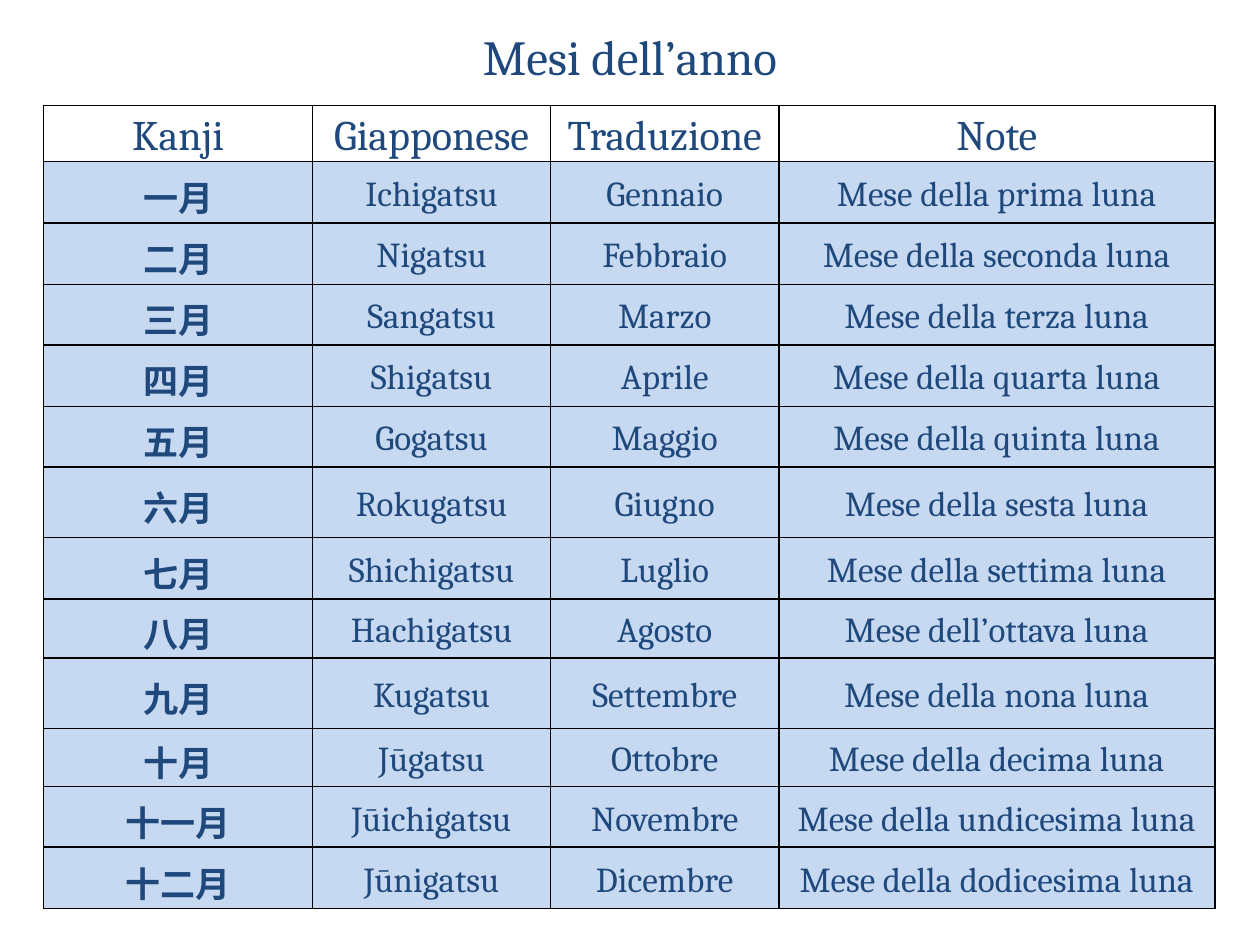
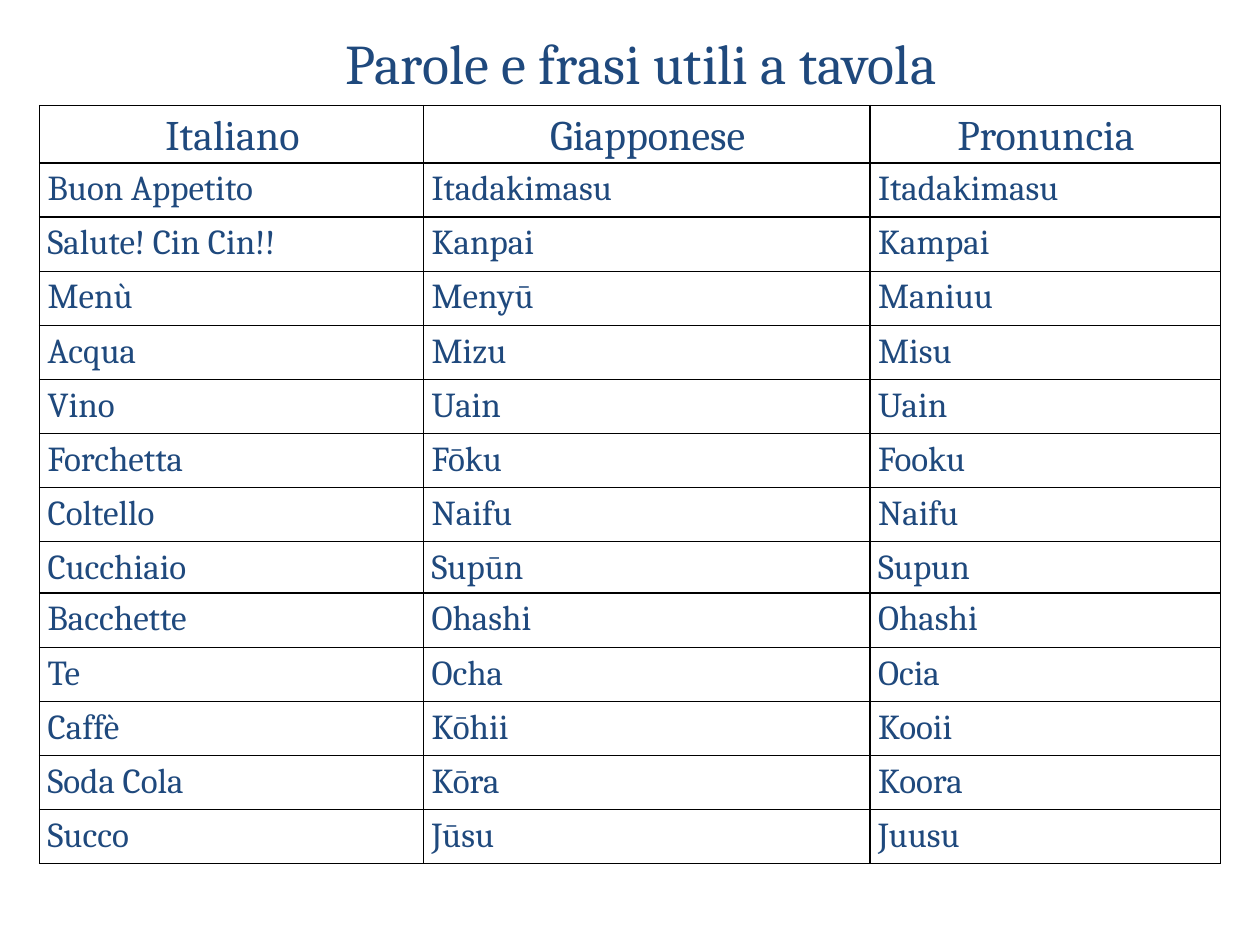
from lxml import etree
from pptx import Presentation
from pptx import util as u
from pptx.dml.color import RGBColor
from pptx.enum import text
from pptx.oxml import ns

FONT = "Cambria"
INK = "1F497D"
PALE_BLUE = "C6D9F1"
BORDER = "000000"
TABLE_TOP = 2.13
HEADER_HEIGHT = 1.1
HEADER_SIZE = 24
BODY_SIZE = 20

MONTHS = [
    ("Kanji", "Giapponese", "Traduzione", "Note"),
    ("一月", "Ichigatsu", "Gennaio", "Mese della prima luna"),
    ("二月", "Nigatsu", "Febbraio", "Mese della seconda luna"),
    ("三月", "Sangatsu", "Marzo", "Mese della terza luna"),
    ("四月", "Shigatsu", "Aprile", "Mese della quarta luna"),
    ("五月", "Gogatsu", "Maggio", "Mese della quinta luna"),
    ("六月", "Rokugatsu", "Giugno", "Mese della sesta luna"),
    ("七月", "Shichigatsu", "Luglio", "Mese della settima luna"),
    ("八月", "Hachigatsu", "Agosto", "Mese dell’ottava luna"),
    ("九月", "Kugatsu", "Settembre", "Mese della nona luna"),
    ("十月", "Jūgatsu", "Ottobre", "Mese della decima luna"),
    ("十一月", "Jūichigatsu", "Novembre", "Mese della undicesima luna"),
    ("十二月", "Jūnigatsu", "Dicembre", "Mese della dodicesima luna"),
]
MONTH_HEIGHTS = [1.24, 1.24, 1.22, 1.24, 1.22, 1.42, 1.24, 1.19, 1.42, 1.17, 1.22, 1.24]

PHRASES = [
    ("Italiano", "Giapponese", "Pronuncia"),
    ("Buon Appetito", "Itadakimasu", "Itadakimasu"),
    ("Salute! Cin Cin!!", "Kanpai", "Kampai"),
    ("Menù", "Menyū", "Maniuu"),
    ("Acqua", "Mizu", "Misu"),
    ("Vino", "Uain", "Uain"),
    ("Forchetta", "Fōku", "Fooku"),
    ("Coltello", "Naifu", "Naifu"),
    ("Cucchiaio", "Supūn", "Supun"),
    ("Bacchette", "Ohashi", "Ohashi"),
    ("Te", "Ocha", "Ocia"),
    ("Caffè", "Kōhii", "Kooii"),
    ("Soda Cola", "Kōra", "Koora"),
    ("Succo", "Jūsu", "Juusu"),
]
PHRASE_HEIGHTS = [1.09] * 7 + [1.04] + [1.09] * 5


def colour(value):
    return RGBColor.from_string(value)


def write(frame, words, size, bold=False, align=text.PP_ALIGN.CENTER, spacing=1.0):
    para = frame.paragraphs[0]
    para.alignment = align
    para.line_spacing = spacing
    span = para.add_run()
    span.text = words
    span.font.name = FONT
    span.font.size = u.Pt(size)
    span.font.bold = bold
    span.font.color.rgb = colour(INK)


def add_title(page, words, left, top, width, height, size):
    box = page.shapes.add_textbox(u.Cm(left), u.Cm(top), u.Cm(width), u.Cm(height))
    box.text_frame.word_wrap = True
    box.text_frame.vertical_anchor = text.MSO_ANCHOR.MIDDLE
    write(box.text_frame, words, size)


def add_borders(cell):
    """Draw 1 pt lines on all four sides; call before setting the cell's fill."""
    properties = cell._tc.get_or_add_tcPr()
    for side in ("a:lnL", "a:lnR", "a:lnT", "a:lnB"):
        line = etree.SubElement(properties, ns.qn(side), w=str(u.Pt(1)))
        fill = etree.SubElement(line, ns.qn("a:solidFill"))
        etree.SubElement(fill, ns.qn("a:srgbClr"), val=BORDER)


def set_fill(cell, value):
    if value:
        cell.fill.solid()
        cell.fill.fore_color.rgb = colour(value)
    else:
        cell.fill.background()


def set_margins(cell, left, top, right):
    cell.margin_left = u.Cm(left)
    cell.margin_top = u.Cm(top)
    cell.margin_right = u.Cm(right)
    cell.margin_bottom = 0


def add_word_table(page, rows, left, widths, heights, margins, spacing,
                   body_fill=None, body_align=text.PP_ALIGN.LEFT,
                   body_anchor=text.MSO_ANCHOR.TOP, bold_first=False):
    heights = [HEADER_HEIGHT] + heights
    table = page.shapes.add_table(
        len(rows), len(widths), u.Cm(left), u.Cm(TABLE_TOP),
        u.Cm(sum(widths)), u.Cm(sum(heights))).table
    table.first_row = table.horz_banding = False
    for column, width in zip(table.columns, widths):
        column.width = u.Cm(width)
    for r, (words_in_row, height) in enumerate(zip(rows, heights)):
        table.rows[r].height = u.Cm(height)
        header = r == 0
        for c, words in enumerate(words_in_row):
            cell = table.cell(r, c)
            set_margins(cell, *margins)
            add_borders(cell)
            set_fill(cell, None if header else body_fill)
            cell.vertical_anchor = text.MSO_ANCHOR.TOP if header else body_anchor
            write(cell.text_frame, words, HEADER_SIZE if header else BODY_SIZE,
                  bold=bold_first and c == 0 and not header,
                  align=text.PP_ALIGN.CENTER if header else body_align,
                  spacing=spacing)


def main():
    deck = Presentation()
    deck.slide_width, deck.slide_height = u.Cm(25.4), u.Cm(19.05)
    blank = deck.slide_layouts[6]

    months = deck.slides.add_slide(blank)
    add_word_table(months, MONTHS, 0.88, [5.42, 4.8, 4.6, 8.79], MONTH_HEIGHTS,
                   margins=(0.1, 0, 0.1), spacing=1.15, body_fill=PALE_BLUE,
                   body_align=text.PP_ALIGN.CENTER,
                   body_anchor=text.MSO_ANCHOR.MIDDLE, bold_first=True)
    add_title(months, "Mesi dell’anno", 0, 0.41, 25.4, 1.45, 28)

    phrases = deck.slides.add_slide(blank)
    add_word_table(phrases, PHRASES, 0.8, [7.74, 9, 7.06], PHRASE_HEIGHTS,
                   margins=(0.16, 0.07, 0.13), spacing=1.07)
    add_title(phrases, "Parole e frasi utili a tavola", 1.5, 0, 22.86, 2.51, 32)

    deck.save("out.pptx")


if __name__ == "__main__":
    main()
